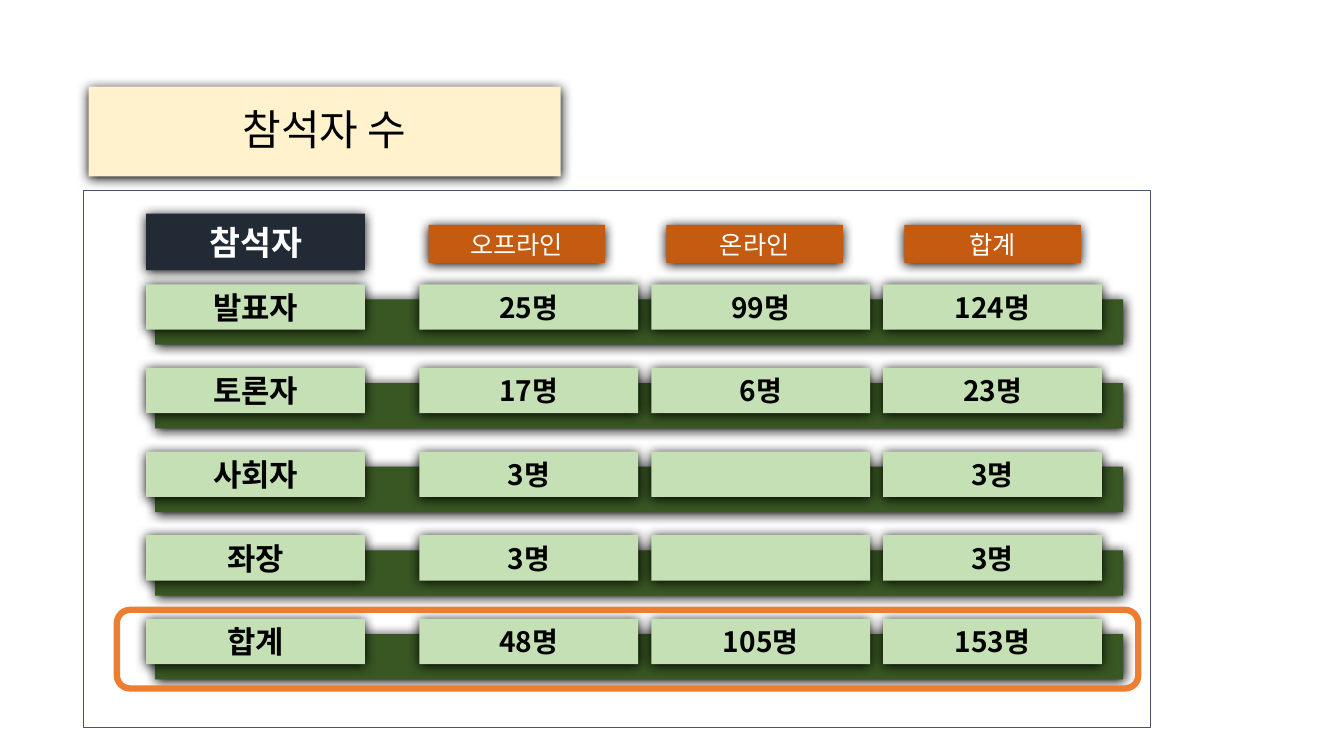
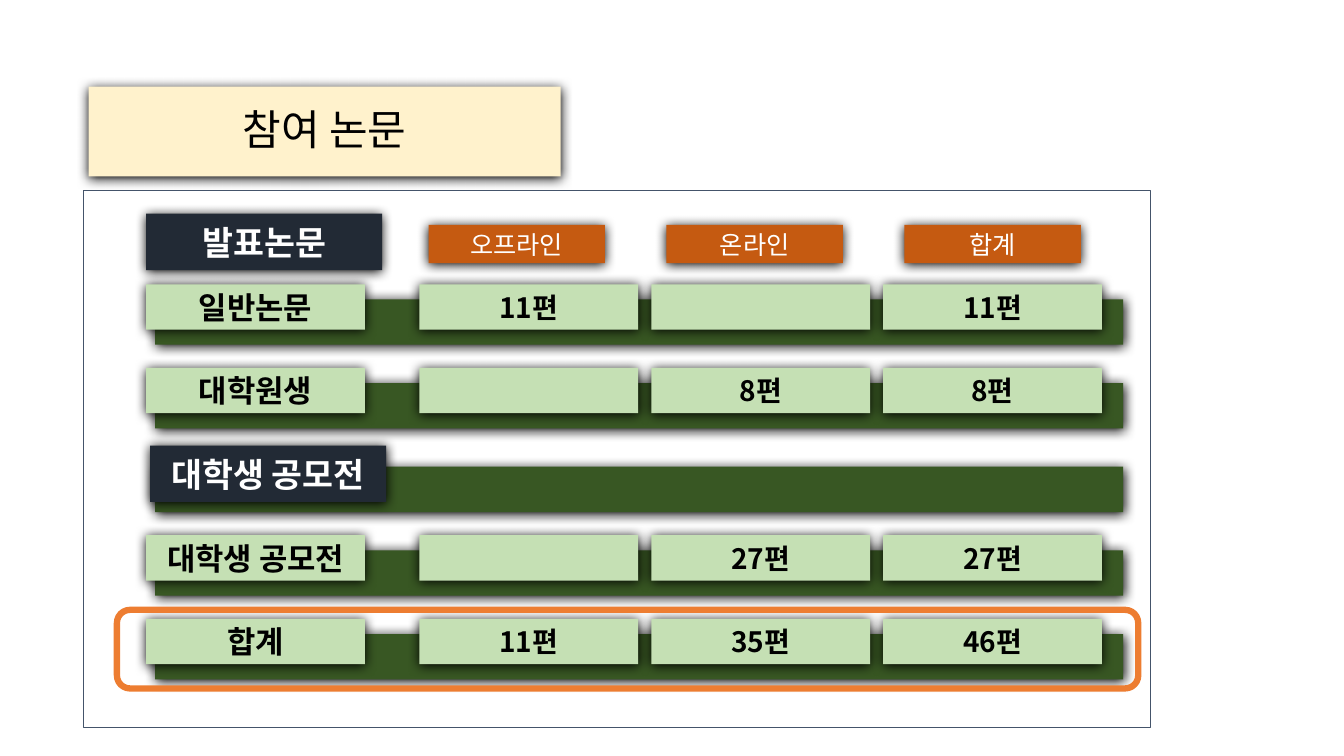
from lxml import etree
from pptx import Presentation
from pptx.dml.color import RGBColor
from pptx.enum.shapes import MSO_SHAPE
from pptx.enum.text import MSO_ANCHOR, MSO_AUTO_SIZE, PP_ALIGN
from pptx.oxml.ns import qn
from pptx.util import Inches, Pt

RECT = MSO_SHAPE.RECTANGLE
ROUND = MSO_SHAPE.ROUNDED_RECTANGLE
CENTER = PP_ALIGN.CENTER
MIDDLE = MSO_ANCHOR.MIDDLE
NO_FIT = MSO_AUTO_SIZE.NONE

FONT = "Noto Sans CJK KR"
WHITE, BLACK, CREAM = "FFFFFF", "000000", "FFF2CC"
NAVY, ORANGE, GREEN, DARK_GREEN = "222A35", "C55A11", "C5E0B4", "385723"
FRAME, HIGHLIGHT = "44546A", "ED7D31"

LABEL_X, VALUE_X, COL_STEP = 1.45, 4.16, 2.3
HEAD_X, HEAD_STEP = 4.25, 2.36
ROW_Y, ROW_STEP = 2.82, 0.83
CELL_W, CELL_H = 2.17, 0.45
HEADS = ("오프라인", "온라인", "합계")


def rgb(value):
    return RGBColor.from_string(value)


def write(sp, text, size=20, color=BLACK, bold=False, spacing=None):
    tf = sp.text_frame
    tf.word_wrap = True
    tf.auto_size = NO_FIT
    tf.vertical_anchor = MIDDLE
    p = tf.paragraphs[0]
    p.alignment = CENTER
    if spacing:
        p.line_spacing = spacing
    r = p.add_run()
    r.text = text
    r.font.name = FONT
    r.font.size = Pt(size)
    r.font.bold = bold
    r.font.color.rgb = rgb(color)
    etree.SubElement(r.font._element, qn("a:ea"), typeface=FONT)


class Deck:
    def __init__(self):
        self.prs = Presentation()
        self.prs.slide_width = Inches(13.33)
        self.prs.slide_height = Inches(7.5)
        self.slide = None

    def row(self, n):
        return ROW_Y + n * ROW_STEP

    def paint(self, sp, fill=None, line=None, width=1, shadow=True):
        if fill:
            sp.fill.solid()
            sp.fill.fore_color.rgb = rgb(fill)
        else:
            sp.fill.background()
        if line:
            sp.line.color.rgb = rgb(line)
            sp.line.width = Pt(width)
        else:
            sp.line.fill.background()
        sp.shadow.inherit = False
        if shadow:
            effects = sp._element.spPr.find(qn("a:effectLst"))
            outer = etree.SubElement(
                effects, qn("a:outerShdw"), blurRad=str(Pt(8.5)),
                dist=str(Pt(1)), dir="5400000", algn="t", rotWithShape="0")
            etree.SubElement(outer, qn("a:srgbClr"), val=BLACK)

    def box(self, x, y, w, h, text="", fill=None, kind=RECT, line=None,
            width=1, shadow=True, **fmt):
        sp = self.slide.shapes.add_shape(
            kind, Inches(x), Inches(y), Inches(w), Inches(h))
        self.paint(sp, fill, line, width, shadow)
        if text:
            write(sp, text, **fmt)

    def title(self, text):
        sp = self.slide.shapes.title
        sp.left, sp.top = Inches(0.88), Inches(0.86)
        sp.width, sp.height = Inches(4.68), Inches(0.89)
        self.paint(sp, CREAM)
        write(sp, text, size=30, spacing=0.9)

    def section(self, text, x, y, w):
        self.box(x, y, w, 0.56, text, NAVY, size=24, color=WHITE, bold=True)

    def heads(self):
        for i, text in enumerate(HEADS):
            self.box(HEAD_X + i * HEAD_STEP, 2.23, 1.75, 0.38, text, ORANGE,
                     size=18, color=WHITE)

    def band(self, n):
        self.box(1.54, self.row(n) + 0.15, 9.6, CELL_H, fill=DARK_GREEN)

    def cells(self, n, label, values):
        y = self.row(n)
        self.box(LABEL_X, y, CELL_W, CELL_H, label, GREEN, size=22, bold=True)
        for i, value in enumerate(values):
            self.box(VALUE_X + i * COL_STEP, y, CELL_W, CELL_H, value, GREEN,
                     bold=True)

    def table_slide(self, title, section, section_w, rows):
        self.slide = self.prs.slides.add_slide(self.prs.slide_layouts[5])
        self.title(title)
        self.box(0.83, 1.89, 10.58, 5.33, fill=WHITE, line=FRAME, shadow=False)
        self.heads()
        self.section(section, LABEL_X, 2.12, section_w)
        for n, (label, *values) in enumerate(rows):
            self.band(n)
            if values:
                self.cells(n, label, values)
            else:
                self.section(label, 1.49, self.row(n) - 0.06, section_w)
        self.box(1.16, 6.05, 10.13, 0.78, kind=ROUND, line=HIGHLIGHT,
                 width=4.5, shadow=False)


def main():
    deck = Deck()
    deck.table_slide("참석자 수", "참석자", 2.17, [
        ("발표자", "25명", "99명", "124명"),
        ("토론자", "17명", "6명", "23명"),
        ("사회자", "3명", "", "3명"),
        ("좌장", "3명", "", "3명"),
        ("합계", "48명", "105명", "153명"),
    ])
    deck.table_slide("참여 논문", "발표논문", 2.34, [
        ("일반논문", "11편", "", "11편"),
        ("대학원생", "", "8편", "8편"),
        ("대학생 공모전",),
        ("대학생 공모전", "", "27편", "27편"),
        ("합계", "11편", "35편", "46편"),
    ])
    deck.prs.save("out.pptx")


if __name__ == "__main__":
    main()
